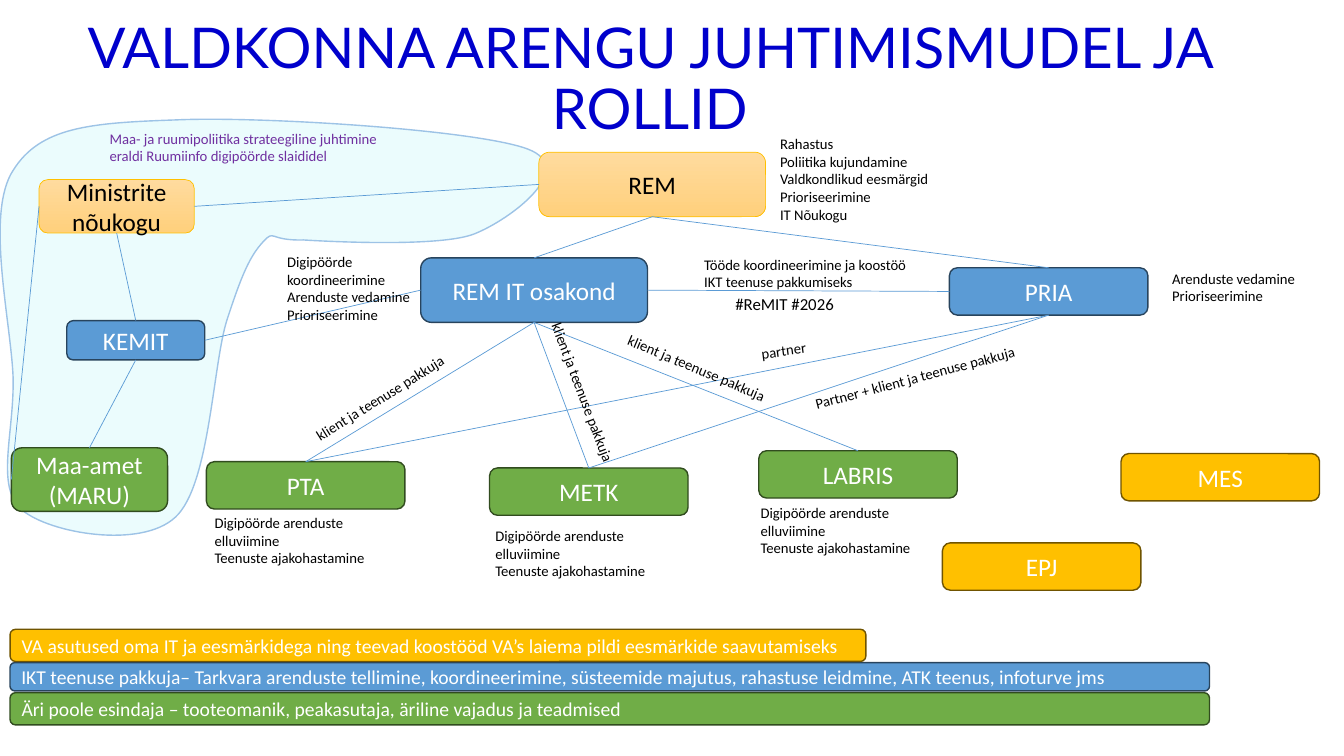
from lxml import etree
from pptx import Presentation
from pptx import util as u
from pptx.dml import color as c
from pptx.enum import shapes, text
from pptx.oxml import ns

WHITE = c.RGBColor(0xFF, 0xFF, 0xFF)
BLACK = c.RGBColor(0x00, 0x00, 0x00)
TITLE_BLUE = c.RGBColor(0x00, 0x00, 0xCC)
PURPLE = c.RGBColor(0x70, 0x30, 0xA0)
BLUE = c.RGBColor(0x5B, 0x9B, 0xD5)
DARK_BLUE = c.RGBColor(0x28, 0x44, 0x5D)
GREEN = c.RGBColor(0x70, 0xAD, 0x47)
DARK_GREEN = c.RGBColor(0x31, 0x4C, 0x1F)
GOLD = c.RGBColor(0xFF, 0xC0, 0x00)
DARK_GOLD = c.RGBColor(0x70, 0x54, 0x00)
PEACH_LIGHT = c.RGBColor(0xFF, 0xDB, 0x9E)
PEACH_DEEP = c.RGBColor(0xFF, 0xD0, 0x7C)
AQUA = c.RGBColor(0x3E, 0xE9, 0xF2)
PALE_BLUE = c.RGBColor(0x9D, 0xC3, 0xE6)

TOP, LEFT, BOTTOM, RIGHT = range(4)
CENTER = text.PP_ALIGN.CENTER
MIDDLE = text.MSO_ANCHOR.MIDDLE
SMALL = (141.8, 33.8)
LARGE = (162, 46.1)

BOXES = {
    "REM": (384.9, 108.7, *LARGE, "peach"),
    "EPJ": (673.2, 387.8, *SMALL, "gold"),
    "LABRIS": (542, 322, *SMALL, "green"),
    "METK": (349.7, 334.3, *SMALL, "green"),
    "PTA": (147.5, 329.8, *SMALL, "green"),
    "PRIA": (678.2, 191.3, *SMALL, "blue"),
    "MES": (800.8, 324, *SMALL, "gold"),
    "REM IT osakond": (300.5, 184.2, *LARGE, "blue"),
    "Maa-amet (MARU)": (8.1, 319.9, 111.6, 45.4, "green"),
    "KEMIT": (47.7, 229, 98.6, 28.1, "blue"),
    "Ministrite nõukogu": (27.9, 128.3, 110.9, 38.2, "peach"),
}
LINKS = [
    ("REM", BOTTOM, "REM IT osakond", TOP),
    ("REM IT osakond", BOTTOM, "PTA", TOP),
    ("REM IT osakond", BOTTOM, "METK", TOP),
    ("REM IT osakond", BOTTOM, "LABRIS", TOP),
    ("REM IT osakond", RIGHT, "PRIA", LEFT),
    ("REM", BOTTOM, "PRIA", TOP),
    ("PRIA", BOTTOM, "PTA", TOP),
    ("PRIA", BOTTOM, "METK", TOP),
    ("REM IT osakond", LEFT, "KEMIT", RIGHT),
    ("KEMIT", BOTTOM, "Maa-amet (MARU)", TOP),
    ("REM", LEFT, "Ministrite nõukogu", RIGHT),
    ("Ministrite nõukogu", BOTTOM, "KEMIT", TOP),
    ("Ministrite nõukogu", LEFT, "Maa-amet (MARU)", LEFT),
]
LEGEND = [
    ("Äri poole esindaja – tooteomanik, peakasutaja, äriline vajadus ja teadmised",
     494.8, 856.8, 23, "green"),
    ("IKT teenuse pakkuja– Tarkvara arenduste tellimine, koordineerimine, süsteemide majutus, "
     "rahastuse leidmine, ATK teenus, infoturve jms", 473.3, 856.8, 20.2, "blue"),
    ("VA asutused oma IT ja eesmärkidega ning teevad koostööd VA’s laiema pildi eesmärkide "
     "saavutamiseks", 449.5, 611.3, 23, "gold"),
]
NOTES = [
    ("Tööde koordineerimine ja koostöö\nIKT teenuse pakkumiseks", 495.9, 179, 280.8, 32.7),
    ("Rahastus\nPoliitika kujundamine\nValdkondlikud eesmärgid\nPrioriseerimine\nIT Nõukogu",
     550.1, 92.9, 129.6, 70.6),
    ("Digipöörde koordineerimine\nArenduste vedamine Prioriseerimine", 198, 177.1, 129.6, 58.3),
    ("Arenduste vedamine Prioriseerimine", 830.2, 188.9, 129.6, 58.3),
]
AGENCY_ROLE = "Digipöörde arenduste elluviimine\nTeenuste ajakohastamine"
AGENCY_NOTES = [(146.2, 363.6), (346.8, 372.7), (536.2, 356.4)]
CLIENT_ROLE = " klient ja teenuse pakkuja"
LINK_LABELS = [
    ("partner", 536.6, 238.1, 81.4, 352.6),
    ("Partner + klient ja teenuse pakkuja", 573.1, 258.5, 170.6, 345.3),
    (CLIENT_ROLE, 205.9, 262.1, 170.6, 328.1),
    (CLIENT_ROLE, 339.1, 292.1, 170.6, 69.2),
    (CLIENT_ROLE, 433.7, 262.1, 170.6, 23),
]
ZONE_PLACE = (0, 85, 390.2, 297.4)
ZONE_START = (125.3, 85.7)
ZONE_CURVES = [
    ((186.5, 82.8), (342, 92.9), (377.3, 106.6)),
    ((412.6, 120.2), (365.8, 156.2), (339.1, 167)),
    ((312.5, 177.8), (216.7, 171.4), (216.7, 171.4)),
    ((191.5, 172.1), (196.6, 163.4), (187.9, 172.8)),
    ((178.6, 182.9), (172.8, 195.8), (162, 229)),
    ((151.9, 261.4), (149.8, 347), (125.3, 369.4)),
    ((100.8, 392.4), (35.3, 380.9), (15.8, 364.3)),
    ((-3.6, 347.8), (10.1, 310.3), (9.4, 270)),
    ((7.9, 229.7), (-10.8, 152.6), (9.4, 121.7)),
    ((28.8, 90.7), (64.1, 87.8), ZONE_START),
]


def write_text(shape, wording, size=10.5, color=BLACK, font="Calibri", align=None,
               anchor=text.MSO_ANCHOR.TOP, spacing=None):
    frame = shape.text_frame
    frame.word_wrap = True
    frame.vertical_anchor = anchor
    frame.text = wording
    for paragraph in frame.paragraphs:
        paragraph.alignment = align or text.PP_ALIGN.LEFT
        paragraph.line_spacing = spacing
        for run in paragraph.runs:
            run.font.name = font
            run.font.size = u.Pt(size)
            run.font.color.rgb = color


class RoleMap:
    palette = {
        "blue": (BLUE, DARK_BLUE, 1, WHITE),
        "green": (GREEN, DARK_GREEN, 1, WHITE),
        "gold": (GOLD, DARK_GOLD, 1, WHITE),
        "peach": (None, GOLD, 0.5, BLACK),
    }

    def __init__(self, slide):
        self.slide = slide
        self.boxes = {}

    def zone(self, place, start, curves):
        left, top, width, height = map(u.Pt, place)
        builder = self.slide.shapes.build_freeform(left, top)
        builder.add_line_segments([(left + width, top), (left + width, top + height),
                                   (left, top + height)])
        shape = builder.convert_to_shape()
        outline = shape._element.spPr.find(".//" + ns.qn("a:pathLst"))[0]
        for segment in list(outline):
            outline.remove(segment)
        for command, points in [("moveTo", [start]), *(("cubicBezTo", curve) for curve in curves)]:
            segment = etree.SubElement(outline, ns.qn("a:" + command))
            for x, y in points:
                point = etree.SubElement(segment, ns.qn("a:pt"))
                point.set("x", str(u.Pt(x) - left))
                point.set("y", str(u.Pt(y) - top))
        etree.SubElement(outline, ns.qn("a:close"))
        shape.shadow.inherit = False
        shape.fill.solid()
        shape.fill.fore_color.rgb = AQUA
        fill_color = shape._element.spPr.find(".//" + ns.qn("a:srgbClr"))
        etree.SubElement(fill_color, ns.qn("a:alpha")).set("val", "10000")
        shape.line.color.rgb = PALE_BLUE
        shape.line.width = u.Pt(1)

    def box(self, wording, left, top, width, height, kind, size=18, align=CENTER):
        fill, edge, weight, ink = self.palette[kind]
        shape = self.slide.shapes.add_shape(shapes.MSO_SHAPE.ROUNDED_RECTANGLE,
                                            *map(u.Pt, (left, top, width, height)))
        shape.shadow.inherit = False
        if fill is None:
            shape.fill.gradient()
            shape.fill.gradient_angle = 270
            for stop, shade in zip(shape.fill.gradient_stops, (PEACH_LIGHT, PEACH_DEEP)):
                stop.color.rgb = shade
        else:
            shape.fill.solid()
            shape.fill.fore_color.rgb = fill
        shape.line.color.rgb = edge
        shape.line.width = u.Pt(weight)
        write_text(shape, wording, size=size, color=ink, align=align, anchor=MIDDLE)
        self.boxes[wording] = shape

    def link(self, source, source_side, target, target_side):
        connector = self.slide.shapes.add_connector(shapes.MSO_CONNECTOR.STRAIGHT, 0, 0, 0, 0)
        connector.begin_connect(self.boxes[source], source_side)
        connector.end_connect(self.boxes[target], target_side)
        connector.line.color.rgb = BLUE
        connector.line.width = u.Pt(0.5)
        etree.SubElement(connector._element.spPr, ns.qn("a:effectLst"))

    def note(self, wording, left, top, width, height, rotation=0, **style):
        shape = self.slide.shapes.add_textbox(*map(u.Pt, (left, top, width, height)))
        shape.rotation = rotation
        write_text(shape, wording, **style)
        if "anchor" not in style:
            shape.text_frame.auto_size = text.MSO_AUTO_SIZE.SHAPE_TO_FIT_TEXT


def main():
    presentation = Presentation()
    presentation.slide_width = u.Pt(960)
    presentation.slide_height = u.Pt(540)
    role_map = RoleMap(presentation.slides.add_slide(presentation.slide_layouts[6]))

    role_map.zone(ZONE_PLACE, ZONE_START, ZONE_CURVES)
    role_map.note("VALDKONNA ARENGU JUHTIMISMUDEL JA ROLLID", 8, 5.4, 912.2, 104.4, size=40.1,
                  color=TITLE_BLUE, font="Lato", align=CENTER, anchor=MIDDLE, spacing=0.9)
    for name, place in BOXES.items():
        role_map.box(name, *place)
    for ends in LINKS:
        role_map.link(*ends)
    for wording, top, width, height, kind in LEGEND:
        role_map.box(wording, 7.2, top, width, height, kind, size=14, align=text.PP_ALIGN.LEFT)
    for note in NOTES:
        role_map.note(*note)
    for left, top in AGENCY_NOTES:
        role_map.note(AGENCY_ROLE, left, top, 153.4, 45.4)
    for wording, left, top, width, rotation in LINK_LABELS:
        role_map.note(wording, left, top, width, 20.2, rotation)
    role_map.note("#ReMIT #2026", 518.2, 206.2, 148.3, 21.6, size=12)
    role_map.note("Maa- ja ruumipoliitika strateegiline juhtimine eraldi Ruumiinfo digipöörde "
                  "slaididel", 71.3, 88.9, 208.8, 32.4, color=PURPLE)
    presentation.save("out.pptx")


if __name__ == "__main__":
    main()
